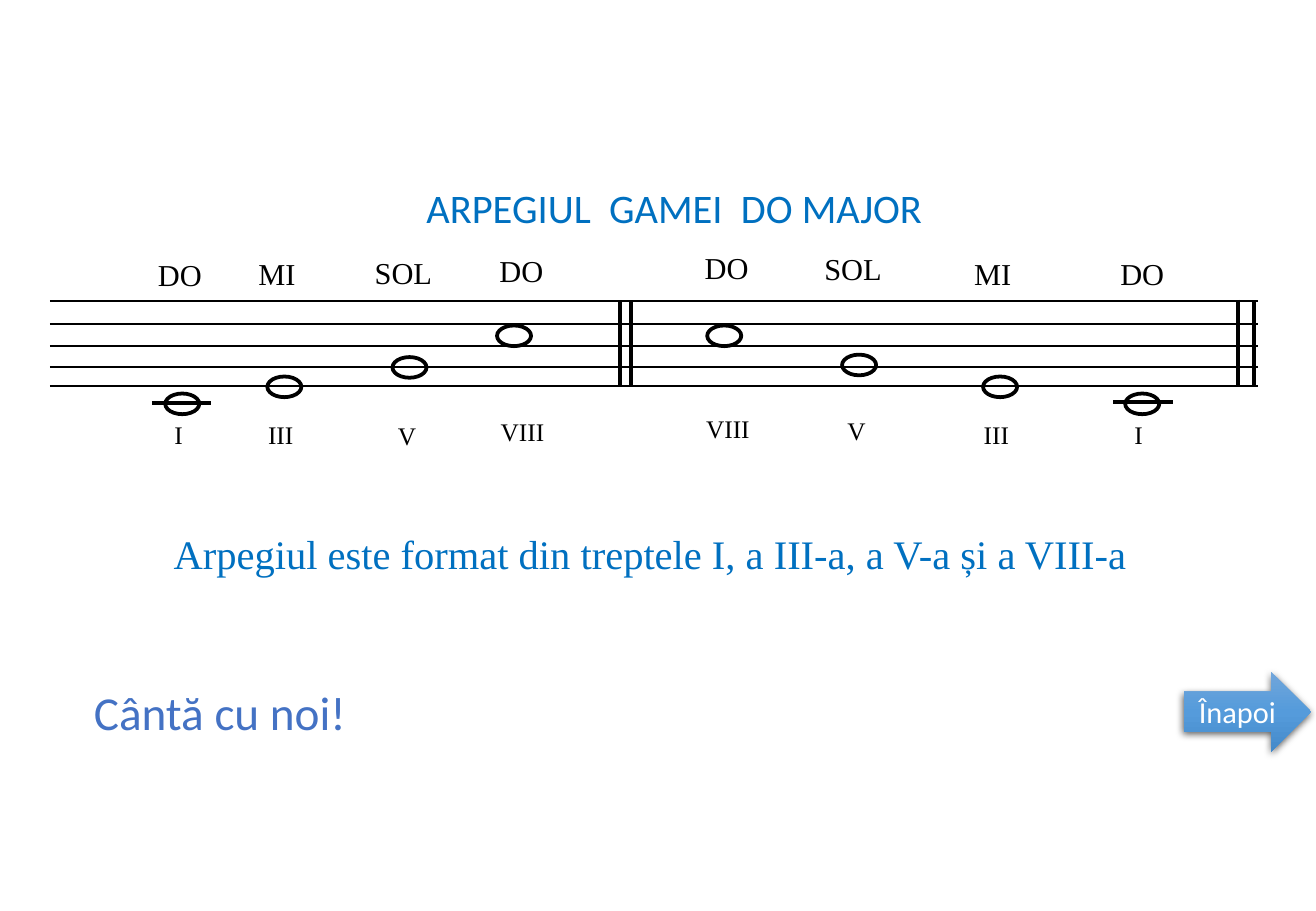
from lxml import etree
from pptx import Presentation
from pptx.dml.color import RGBColor
from pptx.enum.shapes import MSO_CONNECTOR, MSO_SHAPE
from pptx.enum.text import MSO_ANCHOR, PP_ALIGN
from pptx.oxml import parse_xml
from pptx.oxml.ns import nsdecls, qn
from pptx.util import Pt

PX = 9144
COLORS = {"ink": "000000", "blue": "0070C0", "accent": "4472C4", "white": "FFFFFF",
          "top": "71A6DB", "mid": "559BDB", "bottom": "448ACA"}
SERIF, SANS = "Times New Roman", "Calibri"

prs = Presentation()
prs.slide_width, prs.slide_height = 1083 * PX, 750 * PX
s = prs.slides.add_slide(prs.slide_layouts[6])


def write(sp, text, size, font, color):
    p = sp.text_frame.paragraphs[0]
    p.alignment = PP_ALIGN.CENTER
    r = p.add_run()
    r.text = text
    r.font.size = Pt(size)
    r.font.name = font
    r.font.color.rgb = RGBColor.from_string(COLORS[color])


def add_line(x1, y1, x2, y2, width):
    line = s.shapes.add_connector(MSO_CONNECTOR.STRAIGHT, x1 * PX, y1 * PX, x2 * PX, y2 * PX)
    line.line.width = Pt(width)
    line.line.color.rgb = RGBColor.from_string(COLORS["ink"])
    etree.SubElement(line._element.spPr, qn("a:effectLst"))


for y in (248, 267, 285, 302, 318):
    add_line(41, y, 1035, y, 1.25)
for x, y in ((510, 248), (519, 248), (1019, 247), (1032, 249)):
    add_line(x, y, x, y + 70, 2.25)
for x, y in ((125, 332), (916, 331)):
    add_line(x, y, x + 49, y, 2.25)

for x, y in ((136, 324), (220, 310), (323, 294), (409, 268),
             (582, 268), (693, 292), (809, 310), (926, 324)):
    note = s.shapes.add_shape(MSO_SHAPE.OVAL, x * PX, y * PX, 28 * PX, 17 * PX)
    note.shadow.inherit = False
    note.fill.background()
    note.line.width = Pt(2.25)
    note.line.color.rgb = RGBColor.from_string(COLORS["ink"])

names = [("DO", 148, 206), ("MI", 228, 205), ("SOL", 332, 204), ("DO", 429, 203),
         ("DO", 598, 200), ("SOL", 702, 201), ("MI", 817, 205), ("DO", 940, 205)]
degrees = [("I", 147, 340), ("III", 231, 340), ("V", 335, 341), ("VIII", 430, 338),
           ("VIII", 599, 335), ("V", 705, 337), ("III", 820, 340), ("I", 937, 340)]
texts = [("ARPEGIUL  GAMEI  DO MAJOR", 555, 146, 994, 50, 24, SANS, "blue"),
         ("Arpegiul este format din treptele I, a III-a, a V-a și a VIII-a",
          535, 431, 994, 50, 24, SERIF, "blue"),
         ("Cântă cu noi!", 181, 558, 230, 57, 28, SANS, "accent")]
texts += [(*name, 84, 40, 18, SERIF, "ink") for name in names]
texts += [(*degree, 84, 35, 15, SERIF, "ink") for degree in degrees]
for text, center, y, w, h, size, font, color in texts:
    box = s.shapes.add_textbox((center - w // 2) * PX, y * PX, w * PX, h * PX)
    box.text_frame.word_wrap = True
    write(box, text, size, font, color)

back = s.shapes.add_shape(MSO_SHAPE.RIGHT_ARROW, 974 * PX, 553 * PX, 105 * PX, 66 * PX)
back.line.fill.background()
back.fill.background()
spPr = back._element.spPr
stops = "".join(f'<a:gs pos="{pos}"><a:srgbClr val="{COLORS[name]}"/></a:gs>'
                for pos, name in ((0, "top"), (50000, "mid"), (100000, "bottom")))
spPr.replace(spPr.find(qn("a:noFill")), parse_xml(
    f'<a:gradFill {nsdecls("a")} rotWithShape="1"><a:gsLst>{stops}</a:gsLst>'
    '<a:lin ang="5400000" scaled="0"/></a:gradFill>'))
spPr.append(parse_xml(
    f'<a:effectLst {nsdecls("a")}><a:outerShdw blurRad="57150" dist="19050" dir="5400000" '
    f'algn="ctr" rotWithShape="0"><a:srgbClr val="{COLORS["ink"]}"><a:alpha val="63000"/>'
    '</a:srgbClr></a:outerShdw></a:effectLst>'))
back.text_frame.vertical_anchor = MSO_ANCHOR.MIDDLE
back.text_frame.word_wrap = True
write(back, "Înapoi", 18, SANS, "white")

prs.save("out.pptx")
